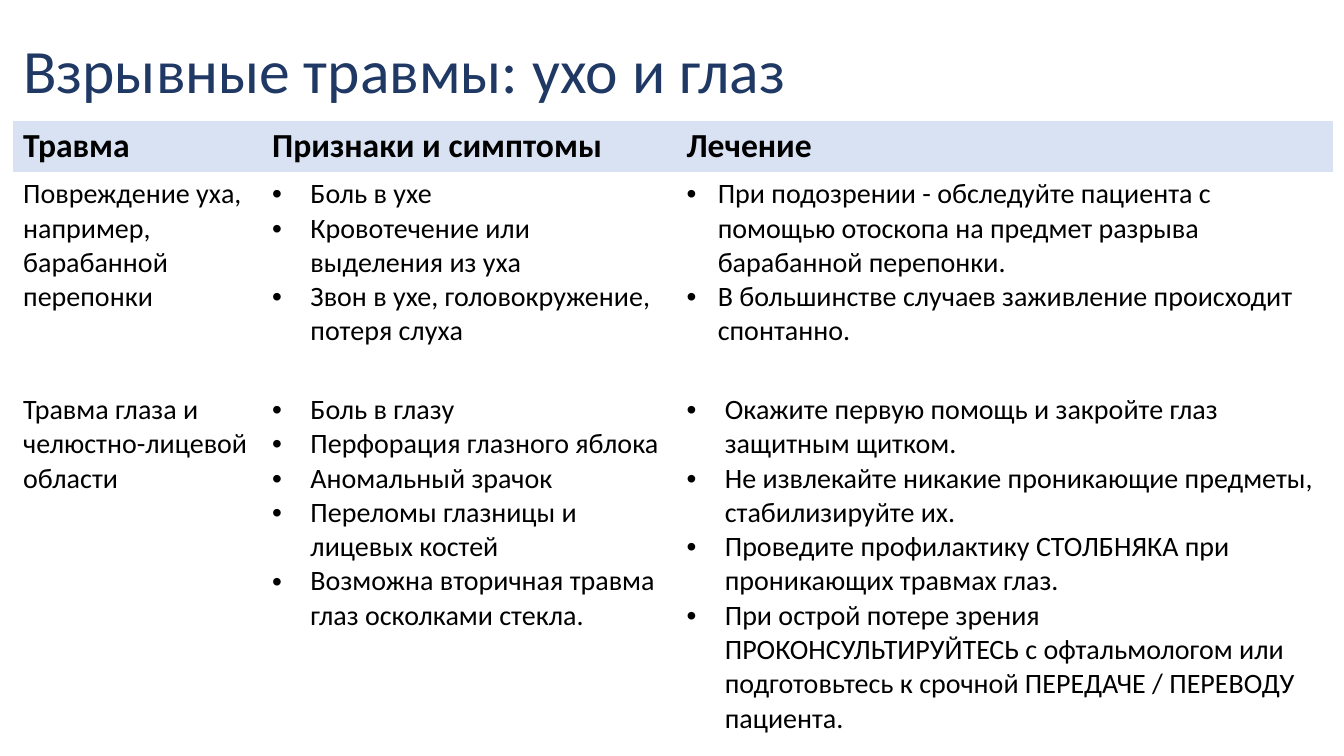
from dataclasses import dataclass

from lxml import etree
from pptx import Presentation
from pptx.dml.color import RGBColor
from pptx.enum import text
from pptx.oxml import ns
from pptx.util import Inches, Pt

COLORS = {"title": "1F3864", "text": "000000", "header": "D8E2F3"}
FONT = "Calibri"
NO_STYLE_NO_GRID = "{2D5ABB26-0587-4C30-8999-92F81FD0307C}"
COLUMN_WIDTHS = [2.47, 4.11, 6.51]
ROW_HEIGHTS = [0.5, 2.14, 3.49]


@dataclass
class CellText:
    lines: list[str]
    size: int = 20
    bold: bool = False
    indent: float = 0  # hanging indent in inches; zero means no bullets
    fill: str | None = None


def heading(label: str) -> CellText:
    return CellText([label], size=24, bold=True, fill="header")


ROWS = [
    [heading("Травма"), heading("Признаки и симптомы"), heading("Лечение")],
    [
        CellText(["Повреждение уха, например, барабанной перепонки"]),
        CellText([
            "Боль в ухе",
            "Кровотечение или выделения из уха",
            "Звон в ухе, головокружение, потеря слуха",
        ], indent=0.38),
        CellText([
            "При подозрении - обследуйте пациента с помощью отоскопа "
            "на предмет разрыва барабанной перепонки.",
            "В большинстве случаев заживление происходит спонтанно.",
        ], indent=0.31),
    ],
    [
        CellText(["Травма глаза и челюстно-лицевой области"]),
        CellText([
            "Боль в глазу",
            "Перфорация глазного яблока",
            "Аномальный зрачок",
            "Переломы глазницы и лицевых костей",
            "Возможна вторичная травма глаз осколками стекла.",
        ], indent=0.38),
        CellText([
            "Окажите первую помощь и закройте глаз защитным щитком.",
            "Не извлекайте никакие проникающие предметы, стабилизируйте их.",
            "Проведите профилактику СТОЛБНЯКА при проникающих травмах глаз.",
            "При острой потере зрения ПРОКОНСУЛЬТИРУЙТЕСЬ с офтальмологом "
            "или подготовьтесь к срочной ПЕРЕДАЧЕ / ПЕРЕВОДУ пациента.",
        ], indent=0.38),
    ],
]


def add_run(p, content: str, size: int, color: str, bold: bool = False) -> None:
    r = p.add_run()
    r.text = content
    r.font.name = FONT
    r.font.size = Pt(size)
    r.font.bold = bold
    r.font.color.rgb = RGBColor.from_string(COLORS[color])


def add_bullet(p, indent: float) -> None:
    pPr = p._p.get_or_add_pPr()
    pPr.set("marL", str(Inches(indent)))
    pPr.set("indent", str(-Inches(indent)))
    color = etree.SubElement(pPr, ns.qn("a:buClr"))
    etree.SubElement(color, ns.qn("a:srgbClr"), val=COLORS["text"])
    etree.SubElement(pPr, ns.qn("a:buFont"), typeface="Arial")
    etree.SubElement(pPr, ns.qn("a:buChar"), char="•")


def fill_cell(cell, content: CellText) -> None:
    if content.fill:
        cell.fill.solid()
        cell.fill.fore_color.rgb = RGBColor.from_string(COLORS[content.fill])
    else:
        cell.fill.background()
    tf = cell.text_frame
    for i, line in enumerate(content.lines):
        p = tf.add_paragraph() if i else tf.paragraphs[0]
        if content.indent:
            add_bullet(p, content.indent)
        add_run(p, line, content.size, "text", content.bold)


def set_title(s, content: str) -> None:
    title = s.shapes.title
    title.left, title.top = Inches(0.13), Inches(0)
    title.width, title.height = Inches(11.5), Inches(1.45)
    tf = title.text_frame
    tf.word_wrap = True
    tf.auto_size = text.MSO_AUTO_SIZE.NONE
    tf.vertical_anchor = text.MSO_ANCHOR.MIDDLE
    p = tf.paragraphs[0]
    p.alignment = text.PP_ALIGN.LEFT
    p.line_spacing = 0.9
    add_run(p, content, 44, "title")


def add_injury_table(s) -> None:
    frame = s.shapes.add_table(
        len(ROWS), len(COLUMN_WIDTHS), Inches(0.13), Inches(1.2),
        Inches(sum(COLUMN_WIDTHS)), Inches(sum(ROW_HEIGHTS)))
    table = frame.table
    table.horz_banding = False
    table._tbl.tblPr.find(ns.qn("a:tableStyleId")).text = NO_STYLE_NO_GRID
    for column, width in zip(table.columns, COLUMN_WIDTHS):
        column.width = Inches(width)
    for row, height, contents in zip(table.rows, ROW_HEIGHTS, ROWS):
        row.height = Inches(height)
        for cell, content in zip(row.cells, contents):
            fill_cell(cell, content)


def main() -> None:
    prs = Presentation()
    prs.slide_width, prs.slide_height = Inches(13.33), Inches(7.5)
    s = prs.slides.add_slide(prs.slide_layouts[5])
    set_title(s, "Взрывные травмы: ухо и глаз")
    add_injury_table(s)
    prs.save("out.pptx")


if __name__ == "__main__":
    main()
